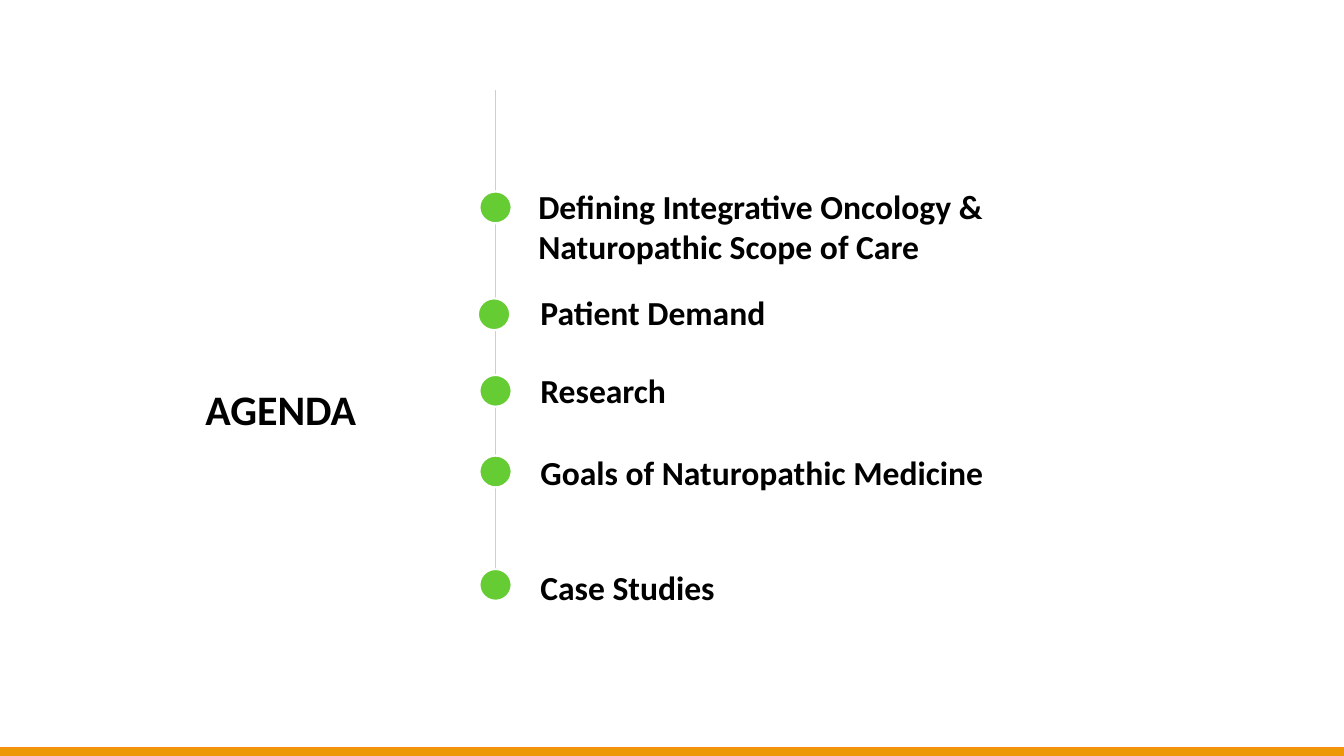
from lxml import etree
from pptx import Presentation
from pptx.dml.color import RGBColor
from pptx.enum import shapes as sh, text as tx
from pptx.oxml.ns import qn
from pptx.util import Inches, Pt

# Content: label, dot left and top, text left, top, width and height
TITLE = "AGENDA"
ITEMS = [
    ("Defining Integrative Oncology & Naturopathic Scope of Care",
     (9.51, 3.8), (10.58, 3.63, 9.97, 1.72)),
    ("Patient Demand", (9.48, 5.92), (10.62, 5.74, 9.08, 0.91)),
    ("Research", (9.51, 7.44), (10.62, 7.3, 6.67, 0.91)),
    ("Goals of Naturopathic Medicine", (9.51, 9.04), (10.62, 8.92, 9.08, 1.72)),
    ("Case Studies", (9.51, 11.29), (10.62, 11.2, 6.67, 0.91)),
]
DOT = (0.64, 0.63)
FONT = {"name": "Calibri", "bold": True}


def color(value):
    return RGBColor.from_string(value)


def stroke(line, hue, width):
    line.color.rgb = color(hue)
    line.width = Pt(width)


def label(slide, words, box, size, align=tx.PP_ALIGN.LEFT):
    frame = slide.shapes.add_textbox(*map(Inches, box)).text_frame
    frame.word_wrap = True
    para = frame.paragraphs[0]
    para.alignment = align
    run = para.add_run()
    run.text = words
    for key, value in {**FONT, "size": Pt(size)}.items():
        setattr(run.font, key, value)
    run.font.color.rgb = color("000000")


def solid(slide, kind, box, fill, edge, width):
    shape = slide.shapes.add_shape(kind, *map(Inches, box))
    shape.shadow.inherit = False
    shape.fill.solid()
    shape.fill.fore_color.rgb = color(fill)
    stroke(shape.line, edge, width)


def main():
    deck = Presentation()
    deck.slide_width, deck.slide_height = Inches(26.66), Inches(15)
    slide = deck.slides.add_slide(deck.slide_layouts[6])

    # Title
    label(slide, TITLE, (1.47, 7.56, 8.2, 1.11), 60, tx.PP_ALIGN.CENTER)

    # Timeline
    ends = map(Inches, (9.83, 1.79, 9.83, 11.92))
    rail = slide.shapes.add_connector(sh.MSO_CONNECTOR.STRAIGHT, *ends)
    stroke(rail.line, "D0CECE", 0.5)
    etree.SubElement(rail._element.spPr, qn("a:effectLst"))

    # Agenda items
    for words, spot, box in ITEMS:
        solid(slide, sh.MSO_SHAPE.OVAL, spot + DOT, "66CC33", "FFFFFF", 3)
        label(slide, words, box, 48)

    # Bottom band
    solid(slide, sh.MSO_SHAPE.RECTANGLE, (-0.03, 14.83, 26.69, 0.2),
          "ED9807", "FF8811", 1)
    deck.save("out.pptx")


if __name__ == "__main__":
    main()
